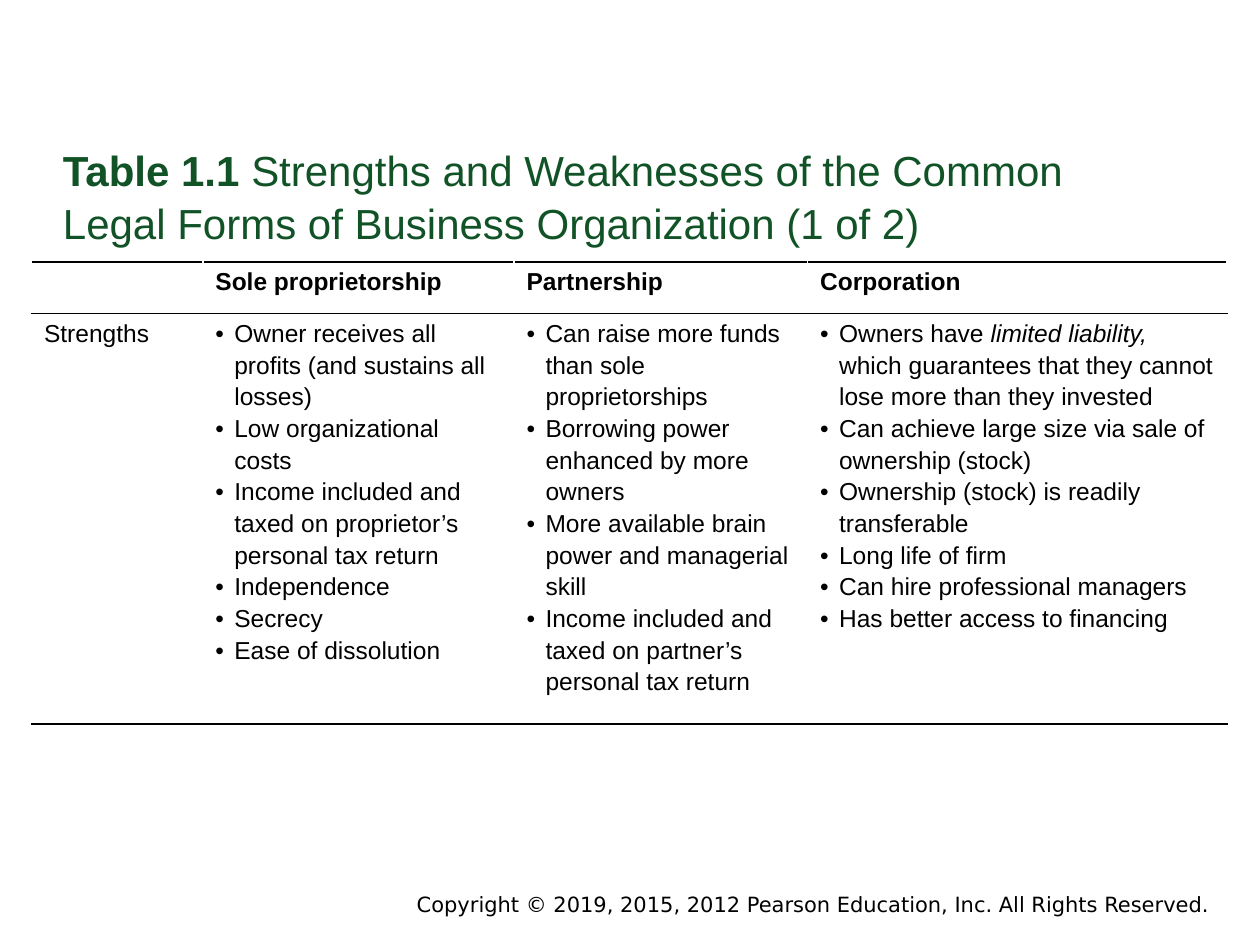
from lxml import etree
from pptx import Presentation
from pptx.dml.color import RGBColor
from pptx.enum.text import MSO_ANCHOR, PP_ALIGN
from pptx.oxml.ns import qn
from pptx.util import Inches, Pt

BLACK = RGBColor(0x00, 0x00, 0x00)
GREEN = RGBColor(0x11, 0x53, 0x27)

COLUMN_WIDTHS = [1.36, 2.47, 2.33, 3.33]
ROW_HEIGHTS = [0.41, 3.05]
HEADINGS = ["Sole proprietorship", "Partnership", "Corporation"]

# One list per legal form; a tuple splits a paragraph into plain and italic runs
STRENGTHS = [
    ["Owner receives all profits (and sustains all losses)",
     "Low organizational costs",
     "Income included and taxed on proprietor’s personal tax return",
     "Independence",
     "Secrecy",
     "Ease of dissolution"],
    ["Can raise more funds than sole proprietorships",
     "Borrowing power enhanced by more owners",
     "More available brain power and managerial skill",
     "Income included and taxed on partner’s personal tax return"],
    [("Owners have ", "limited liability, ",
      "which guarantees that they cannot lose more than they invested"),
     "Can achieve large size via sale of ownership (stock)",
     "Ownership (stock) is readily transferable",
     "Long life of firm",
     "Can hire professional managers",
     "Has better access to financing"],
]


def set_format(target, values):
    for name, value in values.items():
        setattr(target, name, value)


def add_span(para, text, size, color=BLACK, name="Arial", **styles):
    span = para.add_run()
    span.text = text
    set_format(span.font, {"size": Pt(size), "name": name, **styles})
    span.font.color.rgb = color


def add_text_box(page, left, top, width, height, margins):
    box = page.shapes.add_textbox(*map(Inches, (left, top, width, height)))
    frame = box.text_frame
    sides = ("margin_left", "margin_top", "margin_right", "margin_bottom")
    set_format(frame, {side: Inches(size) for side, size in zip(sides, margins)})
    set_format(frame, {"word_wrap": True, "vertical_anchor": MSO_ANCHOR.TOP})
    return frame.paragraphs[0]


def add_bullet(para):
    props = para._p.get_or_add_pPr()
    props.set("marL", str(Inches(0.15)))
    props.set("indent", str(Inches(-0.15)))
    font = etree.SubElement(props, qn("a:buFont"))
    font.set("typeface", "Arial")
    etree.SubElement(props, qn("a:buChar")).set("char", "•")


def add_border(cell, tag):
    line = etree.SubElement(cell._tc.get_or_add_tcPr(), qn(tag), w=str(Pt(1)))
    fill = etree.SubElement(line, qn("a:solidFill"))
    etree.SubElement(fill, qn("a:srgbClr"), val=str(BLACK))


def fill_cell(cell, items, bulleted=False, bold=False):
    frame = cell.text_frame
    for index, item in enumerate(items):
        para = frame.add_paragraph() if index else frame.paragraphs[0]
        if bulleted:
            add_bullet(para)
        para.line_spacing = 1.15
        parts = item if isinstance(item, tuple) else (item,)
        for position, text in enumerate(parts):
            add_span(para, text, 14, bold=bold, italic=position % 2 == 1)


def add_forms_table(page):
    table = page.shapes.add_table(
        len(ROW_HEIGHTS), len(COLUMN_WIDTHS), Inches(0.25), Inches(2.08),
        Inches(sum(COLUMN_WIDTHS)), Inches(sum(ROW_HEIGHTS))).table
    set_format(table, {"first_row": False, "horz_banding": False})
    for column, width in zip(table.columns, COLUMN_WIDTHS):
        column.width = Inches(width)
    for row, height in zip(table.rows, ROW_HEIGHTS):
        row.height = Inches(height)

    # Plain cells ruled above and below
    for cell in table.iter_cells():
        set_format(cell, {"margin_left": Inches(0.1), "margin_right": Inches(0.1),
                          "margin_top": Inches(0.02), "margin_bottom": Inches(0.02)})
        for tag in ("a:lnT", "a:lnB"):
            add_border(cell, tag)
        cell.fill.background()

    # Headings and strengths
    fill_cell(table.cell(1, 0), ["Strengths"])
    for column, (heading, strengths) in enumerate(zip(HEADINGS, STRENGTHS), 1):
        fill_cell(table.cell(0, column), [heading], bold=True)
        fill_cell(table.cell(1, column), strengths, bulleted=True)


def add_title(page):
    para = add_text_box(page, 0.5, 1.12, 8.17, 1.01, (0, 0, 0, 0))
    para.line_spacing = 1.06
    add_span(para, "Table 1.1 ", 24, GREEN, bold=True)
    add_span(para, "Strengths and Weaknesses of the Common Legal Forms "
                   "of Business Organization (1 of 2)", 24, GREEN)


def add_copyright(page):
    para = add_text_box(page, 2.95, 7.03, 6.75, 0.3, (0.1, 0.05, 0.1, 0.05))
    para.alignment = PP_ALIGN.RIGHT
    add_span(para, "Copyright © 2019, 2015, 2012 Pearson Education, Inc. "
                   "All Rights Reserved.", 12, name="DejaVu Sans")


def main():
    deck = Presentation()
    set_format(deck, {"slide_width": Inches(10), "slide_height": Inches(7.5)})
    page = deck.slides.add_slide(deck.slide_layouts[6])
    add_copyright(page)
    add_title(page)
    add_forms_table(page)
    deck.save("out.pptx")


if __name__ == "__main__":
    main()
